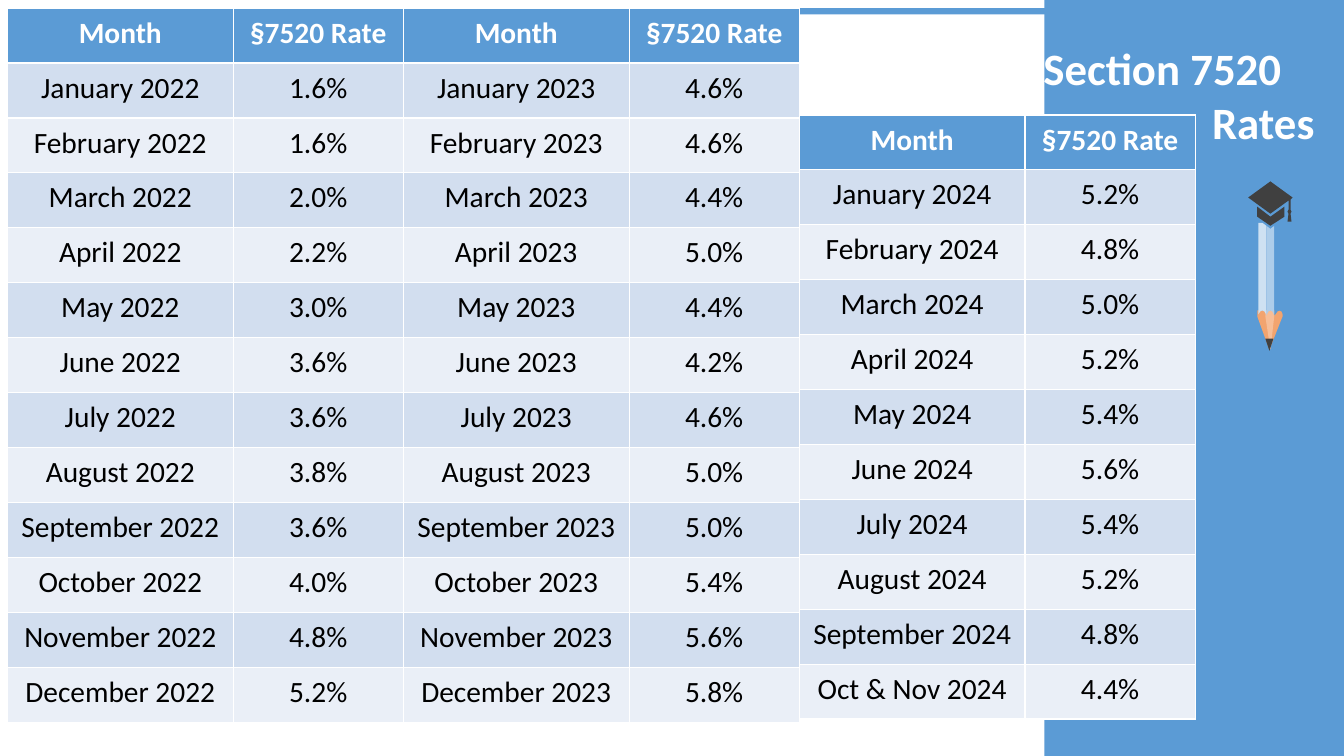
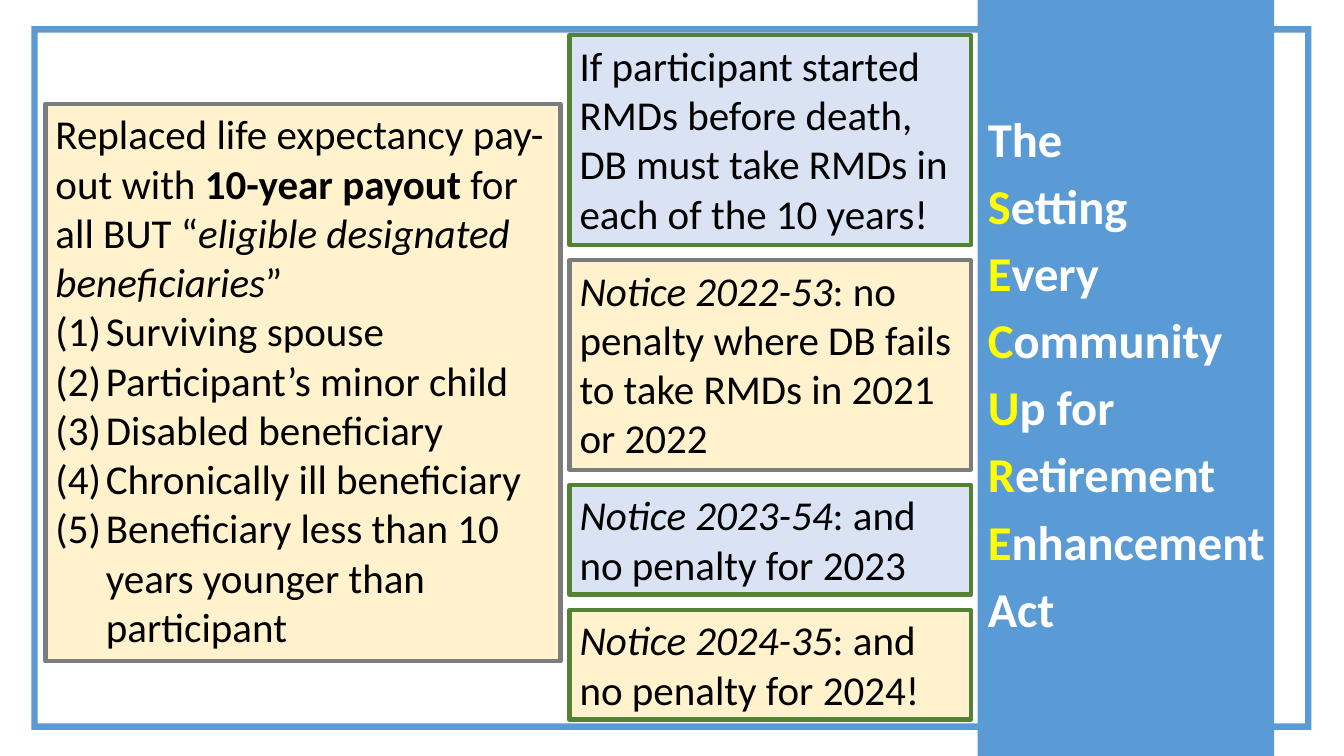
"""Build two slides: the Section 7520 rate tables and the SECURE Act payout rules."""
from lxml.etree import SubElement
from pptx import Presentation
from pptx.dml.color import RGBColor
from pptx.enum.shapes import MSO_SHAPE
from pptx.enum.text import MSO_ANCHOR, MSO_AUTO_SIZE, PP_ALIGN
from pptx.oxml.ns import qn
from pptx.util import Inches, Pt

FONT = "Calibri"
BLUE = RGBColor(0x5B, 0x9B, 0xD5)
ROW_DARK = RGBColor(0xD2, 0xDE, 0xEF)
ROW_LIGHT = RGBColor(0xEA, 0xEF, 0xF7)
WHITE = RGBColor(0xFF, 0xFF, 0xFF)
BLACK = RGBColor(0x00, 0x00, 0x00)
YELLOW = RGBColor(0xFF, 0xFF, 0x00)
CREAM = RGBColor(0xFF, 0xF2, 0xCC)
PALE_BLUE = RGBColor(0xDA, 0xE3, 0xF3)
GRAY = RGBColor(0x7C, 0x7C, 0x7C)
GREEN = RGBColor(0x54, 0x82, 0x35)
CHARCOAL = RGBColor(0x40, 0x40, 0x40)
WOOD = RGBColor(0xF2, 0xA4, 0x6F)
WOOD_LIGHT = RGBColor(0xF6, 0xBE, 0x98)
PENCIL_LIGHT = RGBColor(0xCE, 0xE1, 0xF2)
PENCIL_MIDDLE = RGBColor(0xAD, 0xCD, 0xEA)

deck = Presentation()
deck.slide_width = Inches(13.33)
deck.slide_height = Inches(7.5)


def area(left, top, width, height):
    """Turn percentages of the slide into left, top, width and height."""
    across, down = deck.slide_width / 100, deck.slide_height / 100
    return int(left * across), int(top * down), int(width * across), int(height * down)


def paint(shape, fill, line=None):
    """Fill a shape flatly and give it a 3 point outline, or none."""
    shape.fill.solid()
    shape.fill.fore_color.rgb = fill
    if line is None:
        shape.line.fill.background()
    else:
        shape.line.color.rgb = line
        shape.line.width = Pt(3)


rates_page = deck.slides.add_slide(deck.slide_layouts[5])
secure_page = deck.slides.add_slide(deck.slide_layouts[1])

backdrops = [
    (rates_page, (1.88, 1.07), (77.7, 22.3), (76.88, 0.93, 21.68, 23.07)),
    (secure_page, (2.33, 3.47), (72.75, 22.05), (72.75, 13.73, 22.88, 73.73)),
]
for page, frame_corner, (band_left, band_width), title_area in backdrops:
    title = page.shapes.title
    frame = page.shapes.add_shape(MSO_SHAPE.FRAME, *area(*frame_corner, 95.25, 93.07))
    frame.adjustments[0] = 0.009
    band = page.shapes.add_shape(MSO_SHAPE.RECTANGLE, *area(band_left, 0, band_width, 100))
    for shape in (frame, band):
        shape.shadow.inherit = False
        paint(shape, BLUE)
        title._element.addprevious(shape._element)
    title.left, title.top, title.width, title.height = area(*title_area)
    title.text_frame.auto_size = MSO_AUTO_SIZE.NONE

heading = rates_page.shapes.title.text_frame
heading.text = "Section 7520\nRates"
heading.vertical_anchor = MSO_ANCHOR.MIDDLE
for para, align in zip(heading.paragraphs, (PP_ALIGN.LEFT, PP_ALIGN.RIGHT)):
    para.alignment = align
    para.font.name, para.font.size, para.font.bold = FONT, Pt(32), True
    para.font.color.rgb = WHITE
heading.paragraphs[0].space_before = Pt(6)

MONTHS = ["January", "February", "March", "April", "May", "June", "July",
          "August", "September", "October", "November", "December"]
YEARS = [
    (2022, 1.07, MONTHS, [1.6, 1.6, 2.0, 2.2, 3.0, 3.6, 3.6, 3.8, 3.6, 4.0, 4.8, 5.2]),
    (2023, 1.07, MONTHS, [4.6, 4.6, 4.4, 5.0, 4.4, 4.2, 4.6, 5.0, 5.0, 5.4, 5.6, 5.8]),
    (2024, 15.2, MONTHS[:9] + ["Oct & Nov"],
     [5.2, 4.8, 5.0, 5.2, 5.4, 5.6, 5.4, 5.2, 4.8, 4.4]),
]
MONTH_WIDTH, RATE_WIDTH, ROW_HEIGHT = 16.8, 12.66, 7.27
TABLE_WIDTH = MONTH_WIDTH + RATE_WIDTH
for order, (year, top, months, rates) in enumerate(YEARS):
    lines = [("Month", "§7520 Rate")]
    lines += [(f"{month} {year}", f"{rate:.1f}%") for month, rate in zip(months, rates)]
    place = area(0.55 + order * TABLE_WIDTH, top, TABLE_WIDTH, ROW_HEIGHT * len(lines))
    table = rates_page.shapes.add_table(len(lines), 2, *place).table
    for column, share in zip(table.columns, (MONTH_WIDTH, RATE_WIDTH)):
        column.width = area(0, 0, share, 0)[2]
    for row, line in enumerate(lines):
        for column, words in enumerate(line):
            cell = table.cell(row, column)
            cell.text_frame.text = words
            cell.margin_left = cell.margin_right = Inches(0.13)
            cell.margin_top = cell.margin_bottom = Inches(0.07)
            cell.fill.solid()
            cell.fill.fore_color.rgb = BLUE if row == 0 else (ROW_LIGHT, ROW_DARK)[row % 2]
            para = cell.text_frame.paragraphs[0]
            para.alignment = PP_ALIGN.CENTER
            span = para.runs[0]
            span.font.name, span.font.size, span.font.bold = FONT, Pt(21), row == 0
            span.font.color.rgb = WHITE if row == 0 else BLACK

PENCIL_PARTS = [
    (WOOD, [[(1247, 308), (1272, 308), (1272, 314), (1259, 347), (1247, 314)]]),
    (WOOD_LIGHT, [[(1255, 308), (1264, 308), (1264, 312), (1260, 347), (1255, 314)]]),
    (PENCIL_LIGHT, [[(1248, 221), (1252, 221), (1256, 224), (1256, 312), (1254, 309),
                     (1252, 308), (1250, 309), (1248, 312)]]),
    (PENCIL_MIDDLE, [[(1256, 224), (1260, 227), (1264, 224), (1264, 313), (1262, 309),
                      (1260, 308), (1258, 309), (1256, 313)]]),
    (BLUE, [[(1268, 222), (1273, 222), (1273, 313), (1271, 309), (1269, 308),
             (1267, 309), (1264, 313), (1264, 224)]]),
    (CHARCOAL, [[(1247, 205), (1260, 215), (1274, 205), (1274, 215), (1260, 224), (1247, 215)],
                [(1260, 180), (1282, 196), (1280, 198), (1280, 208), (1281, 210), (1280, 212),
                 (1281, 220), (1277, 220), (1278, 212), (1277, 210), (1278, 208), (1278, 199),
                 (1260, 212), (1238, 196)]]),
]
pencil = rates_page.shapes.add_group_shape()
for color, outlines in PENCIL_PARTS:
    builder = pencil.shapes.build_freeform(*outlines[0][0], scale=Inches(0.01))
    builder.add_line_segments(outlines[0][1:], close=True)
    for outline in outlines[1:]:
        builder.move_to(*outline[0])
        builder.add_line_segments(outline[1:], close=True)
    part = builder.convert_to_shape()
    part.shadow.inherit = False
    paint(part, color)
lead = pencil.shapes.add_shape(MSO_SHAPE.ISOSCELES_TRIANGLE, Inches(12.55), Inches(3.36),
                               Inches(0.08), Inches(0.12))
lead.rotation = 180
lead.shadow.inherit = False
paint(lead, CHARCOAL)

acronym = [[("The", "")]]
acronym += [[(word[0], "yellow"), (word[1:], "")] for word in
            ("Setting", "Every", "Community", "Up for", "Retirement", "Enhancement")]
acronym += [[("Act", "")]]

beneficiaries = ["Surviving spouse", "Participant’s minor child", "Disabled beneficiary",
                 "Chronically ill beneficiary",
                 "Beneficiary less than 10 years younger than participant"]
payout = [[("Replaced life expectancy pay-out with ", ""), ("10-year payout ", "bold"),
           ("for all BUT “", ""), ("eligible designated beneficiaries", "italic"), ("”", "")]]
payout += [[(name, "")] for name in beneficiaries]

payout_box = secure_page.placeholders[1]
payout_box.left, payout_box.top, payout_box.width, payout_box.height = area(
    3.38, 13.73, 38.33, 73.73)
paint(payout_box, CREAM, GRAY)
texts = [(secure_page.shapes.title, 34.7, 6.3, acronym), (payout_box, 29.3, 0, payout)]

NOTICES = [
    (27.73, PALE_BLUE, GREEN, [("If participant started RMDs before death, DB must take "
                                "RMDs in each of the 10 years!", "")]),
    (27.73, CREAM, GRAY, [("Notice 2022-53", "italic"),
                          (": no penalty where DB fails to take RMDs in 2021 or 2022", "")]),
    (14.53, PALE_BLUE, GREEN, [("Notice 2023-54", "italic"),
                               (": and no penalty for 2023", "")]),
    (14.53, CREAM, GREEN, [("Notice 2024-35", "italic"),
                           (": and no penalty for 2024!", "")]),
]
NOTICE_GAP = 2
top = 4.67
for height, fill, line, spans in NOTICES:
    box = secure_page.shapes.add_shape(MSO_SHAPE.RECTANGLE, *area(42.38, top, 29.85, height))
    box.shadow.inherit = False
    paint(box, fill, line)
    texts.append((box, 29.3, 0, [spans]))
    top += height + NOTICE_GAP

for box, size, gap, paragraphs in texts:
    is_title = box.shape_id == secure_page.shapes.title.shape_id
    frame = box.text_frame
    frame.word_wrap = True
    frame.auto_size = MSO_AUTO_SIZE.NONE
    frame.vertical_anchor = MSO_ANCHOR.TOP
    for number, spans in enumerate(paragraphs):
        para = frame.add_paragraph() if number else frame.paragraphs[0]
        para.alignment = PP_ALIGN.LEFT
        para.space_before = Pt(gap if number else 0)
        for words, style in spans:
            span = para.add_run()
            span.text = words
            span.font.name, span.font.size = FONT, Pt(size)
            span.font.bold = is_title or style == "bold"
            span.font.italic = style == "italic"
            span.font.color.rgb = YELLOW if style == "yellow" else WHITE if is_title else BLACK

for number, para in enumerate(payout_box.text_frame.paragraphs):
    settings = para._p.get_or_add_pPr()
    indent = Inches(0.5) if number else 0
    settings.set("marL", str(indent))
    settings.set("indent", str(-indent))
    if number:
        SubElement(settings, qn("a:buFont"), typeface="+mj-lt")
        SubElement(settings, qn("a:buAutoNum"), type="arabicParenBoth")
    else:
        SubElement(settings, qn("a:buNone"))

deck.save("out.pptx")
